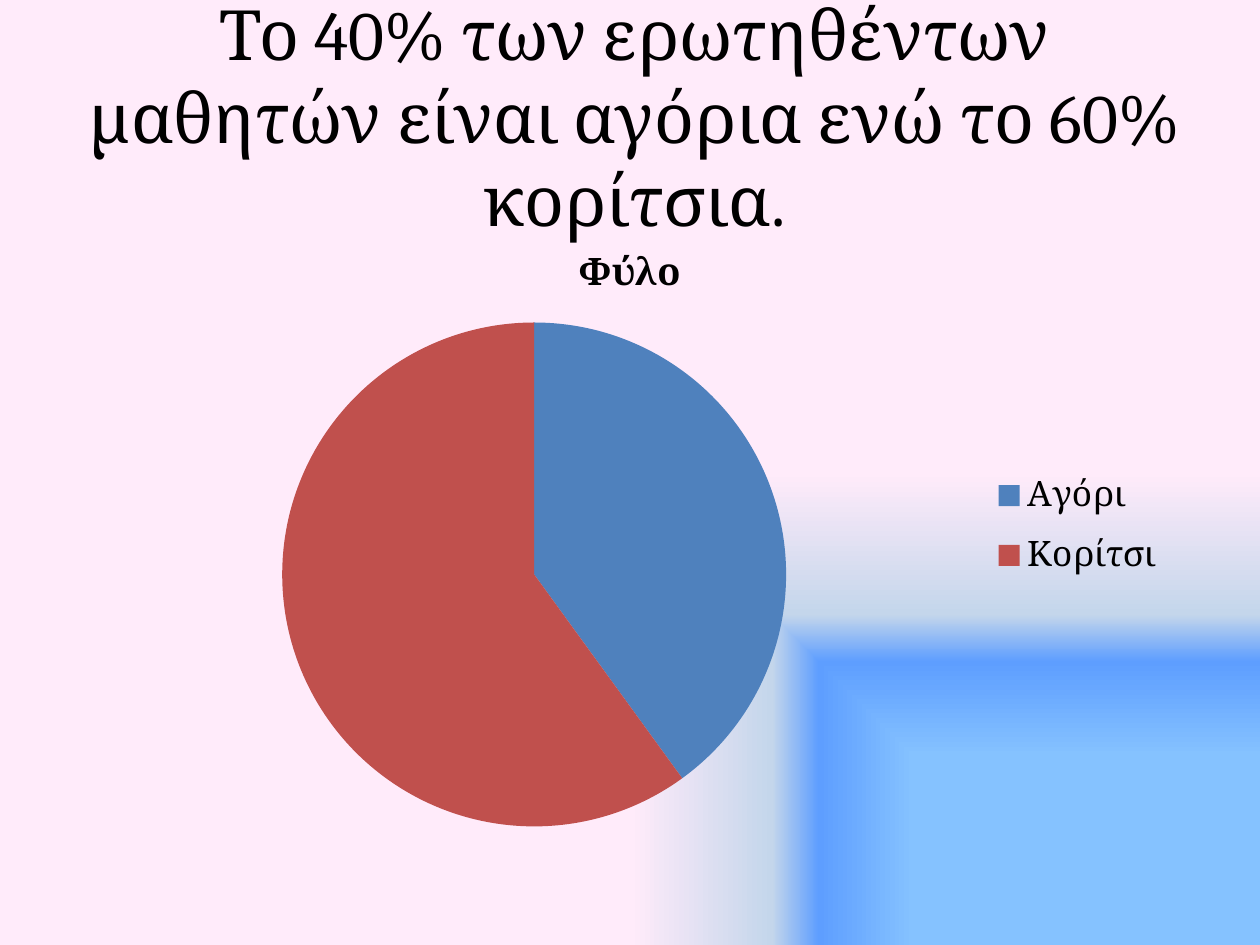
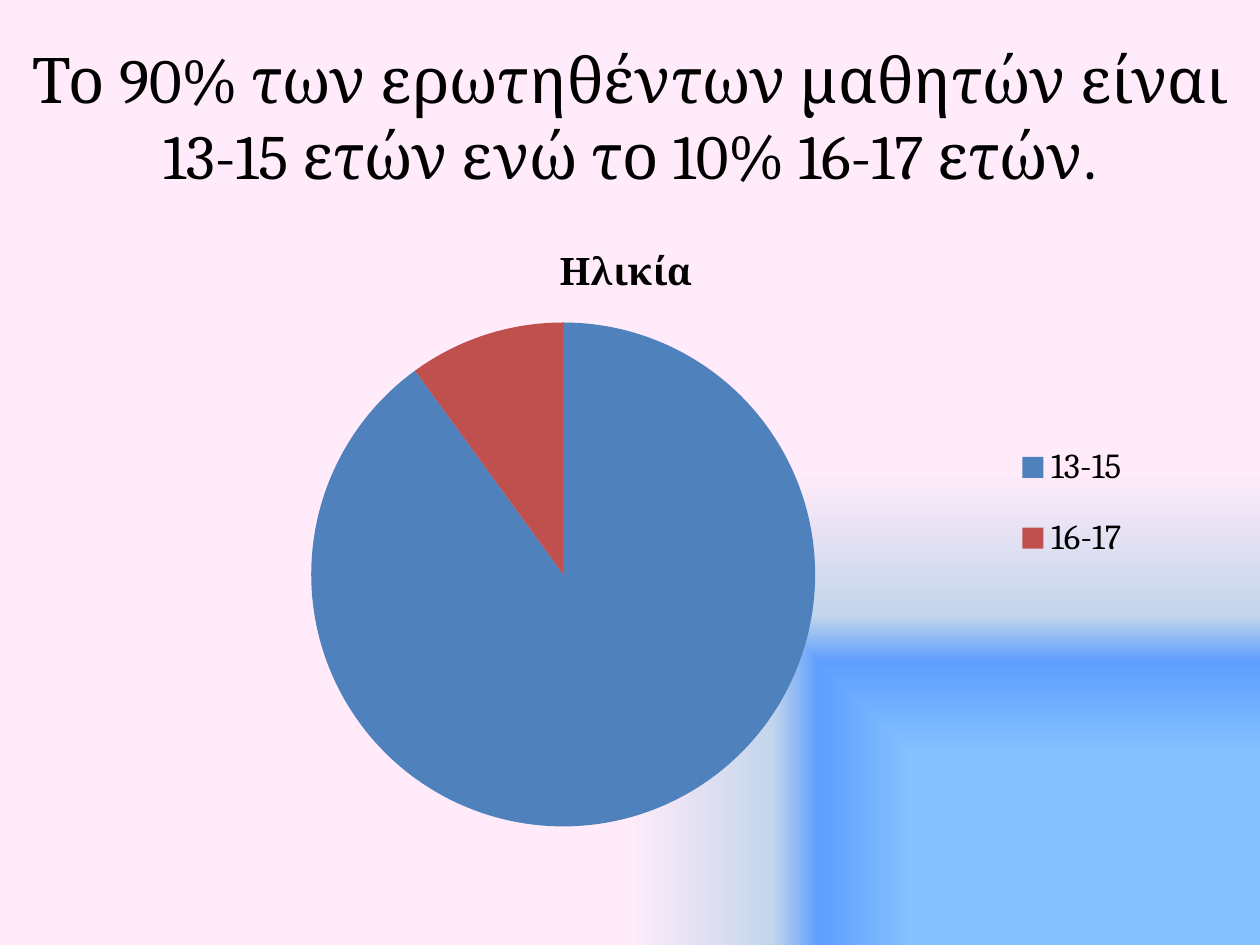
import lxml.etree
import pptx
import pptx.chart.data
import pptx.dml.color
import pptx.enum.chart
import pptx.enum.text
import pptx.oxml
import pptx.oxml.ns
import pptx.util

Inches = pptx.util.Inches
Pt = pptx.util.Pt
qn = pptx.oxml.ns.qn

FONT = "Cambria"
BLACK = "000000"
SLICE_COLOURS = ("4F81BD", "C0504D")
# position in percent, colour, opacity in percent
GLOW_STOPS = ((40, "85C2FF", 100), (60, "5E9EFF", 70), (70, "C4D6EB", 100), (100, "FFEBFA", 100))
CHART_AREA = (0.5, 1.75, 9, 4.95)
PIE_TOP, PIE_SIZE = 2.56, 4


def rgb(colour):
    return pptx.dml.color.RGBColor.from_string(colour)


def style_font(font, size, bold=False):
    font.name = FONT
    font.size = Pt(size)
    font.bold = bold
    font.color.rgb = rgb(BLACK)


def set_glow_background(master):
    """Fill the master with a gradient that spreads from the bottom right corner."""
    master.background.fill.solid()
    solid = next(master.element.iter(qn("p:bgPr")))[0]
    stops = "".join(
        f'<a:gs pos="{position * 1000}"><a:srgbClr val="{colour}">'
        f'<a:alpha val="{opacity * 1000}"/></a:srgbClr></a:gs>'
        for position, colour, opacity in GLOW_STOPS
    )
    gradient = pptx.oxml.parse_xml(
        f'<a:gradFill {pptx.oxml.ns.nsdecls("a")} rotWithShape="1"><a:gsLst>{stops}</a:gsLst>'
        '<a:path path="rect"><a:fillToRect l="100000" t="100000"/></a:path></a:gradFill>'
    )
    solid.getparent().replace(solid, gradient)


def add_title(page, text, area, size):
    title = page.shapes.title
    title.left, title.top, title.width, title.height = map(Inches, area)
    frame = title.text_frame
    frame.word_wrap = True
    frame.auto_size = pptx.enum.text.MSO_AUTO_SIZE.NONE
    frame.vertical_anchor = pptx.enum.text.MSO_ANCHOR.MIDDLE
    para = frame.paragraphs[0]
    para.alignment = pptx.enum.text.PP_ALIGN.CENTER
    span = para.add_run()
    span.text = text
    style_font(span.font, size)


def place_in_chart(element, index, area, inner=False):
    """Give a plot area or legend a fixed place, in slide inches."""
    for old in element.findall(qn("c:layout")):
        element.remove(old)
    left, top, width, height = CHART_AREA
    fractions = {
        "x": (area[0] - left) / width,
        "y": (area[1] - top) / height,
        "w": area[2] / width,
        "h": area[3] / height,
    }
    layout = lxml.etree.Element(qn("c:layout"))
    manual = lxml.etree.SubElement(layout, qn("c:manualLayout"))
    if inner:
        lxml.etree.SubElement(manual, qn("c:layoutTarget"), val="inner")
    for name in "xy":
        lxml.etree.SubElement(manual, qn(f"c:{name}Mode"), val="edge")
    for name, value in fractions.items():
        lxml.etree.SubElement(manual, qn(f"c:{name}"), val=f"{value:.4f}")
    element.insert(index, layout)


def add_pie(page, name, shares, pie_left, legend_area):
    data = pptx.chart.data.CategoryChartData()
    data.categories = list(shares)
    data.add_series(name, list(shares.values()))
    chart = page.shapes.add_chart(
        pptx.enum.chart.XL_CHART_TYPE.PIE, *map(Inches, CHART_AREA), data
    ).chart
    style_font(chart.font, 18)

    chart.has_title = True
    span = chart.chart_title.text_frame.paragraphs[0].add_run()
    span.text = name
    style_font(span.font, 21.6, bold=True)

    chart.has_legend = True
    chart.legend.position = pptx.enum.chart.XL_LEGEND_POSITION.RIGHT
    chart.legend.include_in_layout = False
    style_font(chart.legend.font, 20)

    plot = chart.plots[0]
    plot.vary_by_categories = True
    for index, colour in enumerate(SLICE_COLOURS):
        fill = plot.series[0].points[index].format.fill
        fill.solid()
        fill.fore_color.rgb = rgb(colour)

    pie_area = (pie_left, PIE_TOP, PIE_SIZE, PIE_SIZE)
    place_in_chart(next(chart.element.iter(qn("c:plotArea"))), 0, pie_area, inner=True)
    place_in_chart(next(chart.element.iter(qn("c:legend"))), 1, legend_area)


def main():
    deck = pptx.Presentation()
    deck.slide_width, deck.slide_height = Inches(10), Inches(7.5)
    set_glow_background(deck.slide_master)
    title_only = deck.slide_layouts[5]

    gender = deck.slides.add_slide(title_only)
    add_title(gender, "Το 40% των ερωτηθέντων μαθητών είναι αγόρια ενώ το 60% κορίτσια.",
              (0.5, 0.3, 9.07, 1.24), 39.6)
    add_pie(gender, "Φύλο", {"Αγόρι": 40, "Κορίτσι": 60}, 2.24, (7.8, 3.62, 1.5, 1.1))

    age = deck.slides.add_slide(title_only)
    add_title(age, "Το 90% των ερωτηθέντων μαθητών είναι 13-15 ετών ενώ το 10% 16-17 ετών.",
              (0, 0.3, 10, 1.25), 36)
    add_pie(age, "Ηλικία ", {"13-15": 90, "16-17": 10}, 2.47, (7.96, 3.31, 1.1, 1.36))

    deck.save("out.pptx")


if __name__ == "__main__":
    main()
